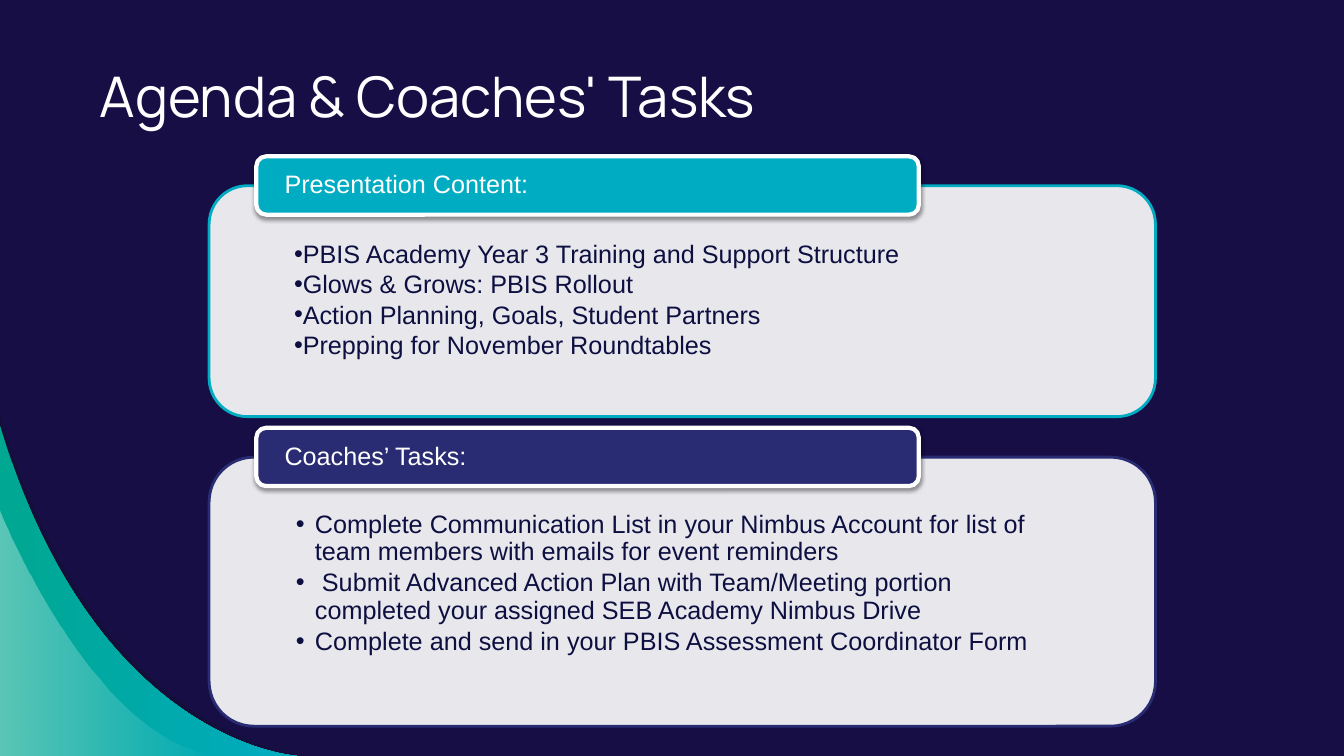
from dataclasses import dataclass

from lxml import etree
from pptx import Presentation
from pptx.dml.color import RGBColor
from pptx.enum.shapes import MSO_SHAPE
from pptx.enum.text import MSO_ANCHOR, MSO_AUTO_SIZE, PP_ALIGN
from pptx.oxml.ns import qn
from pptx.util import Cm, Pt

ROUNDED = MSO_SHAPE.ROUNDED_RECTANGLE
MIDDLE = MSO_ANCHOR.MIDDLE
TOP = MSO_ANCHOR.TOP
LEFT = PP_ALIGN.LEFT
NO_AUTOFIT = MSO_AUTO_SIZE.NONE
TITLE_ONLY = 5


@dataclass(frozen=True)
class Theme:
    background: RGBColor = RGBColor(0x16, 0x0E, 0x44)
    shade: RGBColor = RGBColor(0x12, 0x10, 0x2F)
    teal: RGBColor = RGBColor(0x00, 0xAC, 0xC2)
    green: RGBColor = RGBColor(0x00, 0xA7, 0x91)
    indigo: RGBColor = RGBColor(0x29, 0x2C, 0x73)
    white: RGBColor = RGBColor(0xFF, 0xFF, 0xFF)
    ink: RGBColor = RGBColor(0x0D, 0x0F, 0x41)
    title_font: str = "Manrope"
    body_font: str = "Arial"
    title_size: int = 40
    body_size: int = 18


THEME = Theme()

AGENDA = [
    "PBIS Academy Year 3 Training and Support Structure",
    "Glows & Grows: PBIS Rollout",
    "Action Planning, Goals, Student Partners",
    "Prepping for November Roundtables",
]
TASKS = [
    "Complete Communication List in your Nimbus Account for list of "
    "team members with emails for event reminders",
    " Submit Advanced Action Plan with Team/Meeting portion "
    "completed your assigned SEB Academy Nimbus Drive",
    "Complete and send in your PBIS Assessment Coordinator Form",
]


def set_opacity(shape, percents):
    colors = shape.element.spPr.iter(qn("a:srgbClr"))
    for color, percent in zip(list(colors), percents):
        etree.SubElement(color, qn("a:alpha"), val=str(percent * 1000))


def add_shadow(shape):
    effects = shape.element.spPr.find(qn("a:effectLst"))
    shadow = etree.SubElement(
        effects, qn("a:outerShdw"), blurRad=str(Pt(3.1)), dist=str(Pt(1.6)),
        dir="5400000", algn="ctr", rotWithShape="0")
    color = etree.SubElement(shadow, qn("a:srgbClr"), val="000000")
    etree.SubElement(color, qn("a:alpha"), val="38000")


def add_bullet(paragraph, indent):
    properties = paragraph._p.get_or_add_pPr()
    properties.set("marL", str(Cm(indent)))
    properties.set("indent", str(-Cm(indent)))
    etree.SubElement(properties, qn("a:buFont"), typeface="Arial")
    etree.SubElement(properties, qn("a:buChar"), char="•")


def add_run(paragraph, text, font, size, color):
    run = paragraph.add_run()
    run.text = text
    run.font.name = font
    run.font.size = Pt(size)
    run.font.color.rgb = color


def format_frame(frame, anchor, margins):
    frame.word_wrap = True
    frame.auto_size = NO_AUTOFIT
    frame.vertical_anchor = anchor
    (frame.margin_left, frame.margin_top,
     frame.margin_right, frame.margin_bottom) = [Cm(margin) for margin in margins]


def add_text(slide, box, anchor, margins):
    frame = slide.shapes.add_textbox(*[Cm(length) for length in box]).text_frame
    format_frame(frame, anchor, margins)
    return frame


def add_rounded(slide, box, fill, line, width):
    shape = slide.shapes.add_shape(ROUNDED, *[Cm(length) for length in box])
    shape.shadow.inherit = False
    shape.fill.solid()
    shape.fill.fore_color.rgb = fill
    shape.line.color.rgb = line
    shape.line.width = Pt(width)
    return shape


def bend_first_segments(shape):
    segments = list(shape.element.spPr.iter(qn("a:lnTo")))[:3]
    curve = etree.Element(qn("a:cubicBezTo"))
    segments[0].addprevious(curve)
    for segment in segments:
        curve.append(segment[0])
        segment.getparent().remove(segment)


def add_swoosh(slide, bottom, curve, colors, opacities):
    points = [(Cm(x), Cm(y)) for x, y in curve + [(0, bottom)]]
    builder = slide.shapes.build_freeform(*points[0])
    builder.add_line_segments(points[1:], close=True)
    shape = builder.convert_to_shape()
    bend_first_segments(shape)
    shape.shadow.inherit = False
    shape.line.fill.background()
    if len(colors) == 1:
        shape.fill.solid()
        shape.fill.fore_color.rgb = colors[0]
    else:
        shape.fill.gradient()
        shape.fill.gradient_angle = 0
        for stop, color in zip(shape.fill.gradient_stops, colors):
            stop.color.rgb = color
    set_opacity(shape, opacities)


def add_corner(slide, bottom):
    end = (7.7, bottom)
    add_swoosh(slide, bottom, [(0, 10.49), (2.49, 18.77), end, end],
               [THEME.shade], [54])
    end = (7.49, bottom)
    add_swoosh(slide, bottom, [(0, 10.72), (2.41, 18.77), end, end],
               [THEME.green, THEME.teal], [100, 100])
    start = (0, 12.85)
    add_swoosh(slide, bottom, [start, start, (2.31, 18.67), (5.49, bottom)],
               [THEME.white, THEME.white], [36, 0])


def add_title(slide, box, text):
    title = slide.shapes.title
    title.left, title.top, title.width, title.height = [Cm(length) for length in box]
    format_frame(title.text_frame, TOP, [0.25] * 4)
    paragraph = title.text_frame.paragraphs[0]
    paragraph.alignment = LEFT
    add_run(paragraph, text, THEME.title_font, THEME.title_size, THEME.white)


def add_panel(slide, box, accent, heading, items, indent, line_spacing, gap):
    left, top, width, height = box
    panel = add_rounded(slide, box, THEME.white, accent, 2)
    set_opacity(panel, [90])

    inset = height * 0.05
    frame = add_text(
        slide, (left + inset, top + inset, width - 2 * inset, height - 2 * inset),
        TOP, (1.85, 1.04, 1.85, 0.36))
    for index, item in enumerate(items):
        paragraph = frame.add_paragraph() if index else frame.paragraphs[0]
        paragraph.line_spacing = line_spacing
        paragraph.space_after = Pt(gap)
        add_bullet(paragraph, indent)
        add_run(paragraph, item, THEME.body_font, THEME.body_size, THEME.ink)

    tab = (left + 1.19, top - 0.74, width * 0.7, 1.47)
    add_shadow(add_rounded(slide, tab, accent, THEME.white, 3))
    frame = add_text(slide, tab, MIDDLE, (0.71, 0, 0.71, 0))
    paragraph = frame.paragraphs[0]
    paragraph.line_spacing = 0.9
    add_run(paragraph, heading, THEME.body_font, THEME.body_size, THEME.white)


def main():
    presentation = Presentation()
    presentation.slide_width = Cm(33.87)
    presentation.slide_height = Cm(19.05)
    slide = presentation.slides.add_slide(presentation.slide_layouts[TITLE_ONLY])
    slide.background.fill.solid()
    slide.background.fill.fore_color.rgb = THEME.background

    add_corner(slide, 19.05)
    add_panel(slide, (5.27, 4.68, 23.85, 5.82), THEME.teal,
              "Presentation Content:", AGENDA, 0, 1.0, 0)
    add_panel(slide, (5.27, 11.52, 23.85, 6.78), THEME.indigo,
              "Coaches’ Tasks:", TASKS, 0.48, 0.9, 2.7)
    add_title(slide, (2.26, 1.3, 26.06, 2.34), "Agenda & Coaches' Tasks")
    presentation.save("out.pptx")


if __name__ == "__main__":
    main()
